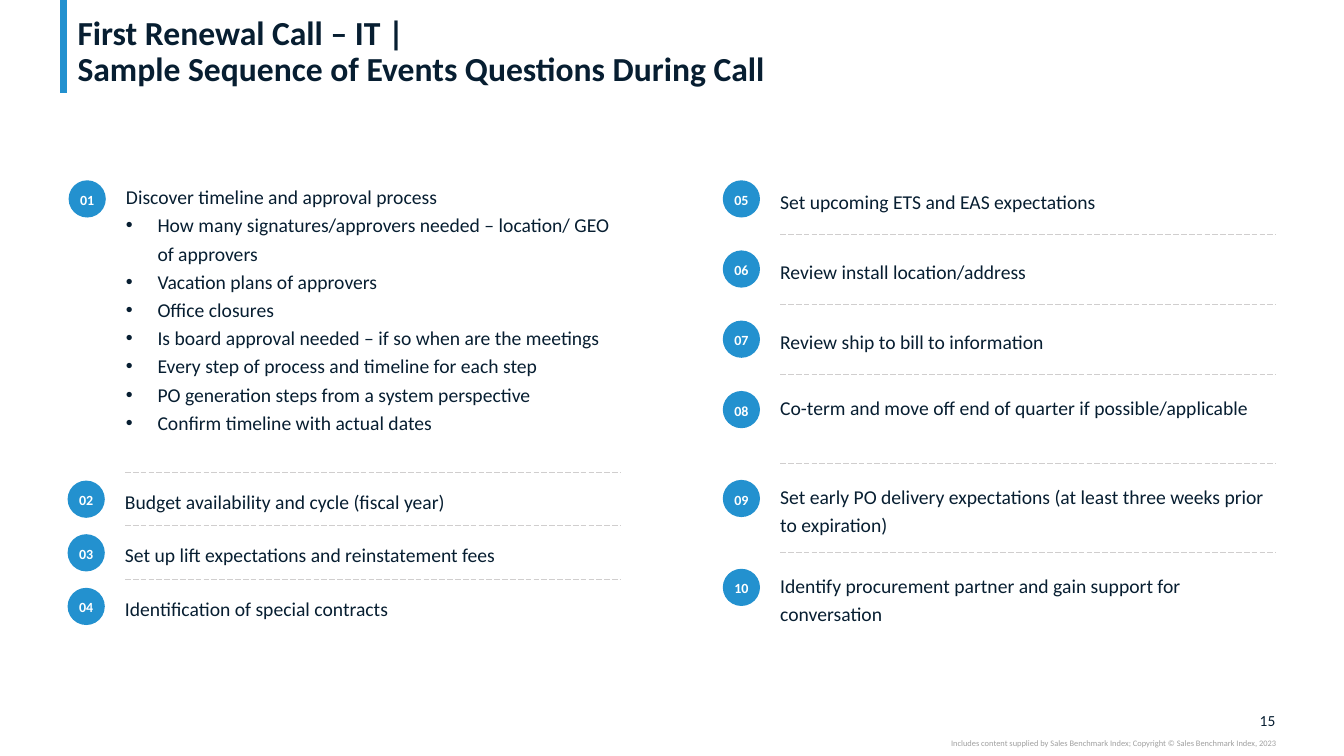
from lxml import etree
from pptx import Presentation
from pptx.dml.color import RGBColor
from pptx.enum import dml, shapes, text
from pptx.oxml import ns
from pptx.util import Pt

BLUE = RGBColor(0x23, 0x91, 0xCF)
NAVY = RGBColor(0x07, 0x1E, 0x31)
GREY = RGBColor(0xA0, 0xA0, 0xA0)
RULE = RGBColor(0xD0, 0xCE, 0xCE)
WHITE = RGBColor(0xFF, 0xFF, 0xFF)
FONT = "Calibri"
DOT = 26.6
SHIFT = 41
WIDTH = 354
TOP = 128.8

TITLE = ["First Renewal Call – IT | ", "Sample Sequence of Events Questions During Call"]
FIRST = "Discover timeline and approval process"
STEPS = [
    "How many signatures/approvers needed – location/ GEO of approvers",
    "Vacation plans of approvers",
    "Office closures",
    "Is board approval needed – if so when are the meetings",
    "Every step of process and timeline for each step",
    "PO generation steps from a system perspective",
    "Confirm timeline with actual dates",
]
LEFT = [
    "Budget availability and cycle (fiscal year)",
    "Set up lift expectations and reinstatement fees",
    "Identification of special contracts",
]
SHORT = [
    "Set upcoming ETS and EAS expectations",
    "Review install location/address",
    "Review ship to bill to information",
]
LONG = [
    "Co-term and move off end of quarter if possible/applicable",
    "Set early PO delivery expectations (at least three weeks prior to expiration)",
    "Identify procurement partner and gain support for conversation",
]
CREDIT = ("Includes content supplied by Sales Benchmark Index; "
          "Copyright © Sales Benchmark Index, 2023")


def add_run(para, words, size, color, bold=False):
    """Add one styled run to a paragraph."""
    run = para.add_run()
    run.text = words
    run.font.name = FONT
    run.font.size = Pt(size)
    run.font.bold = bold
    run.font.color.rgb = color


def set_frame(frame, anchor, side=0, top=0):
    """Set wrapping, anchor and insets of a text frame."""
    frame.word_wrap = True
    frame.auto_size = text.MSO_AUTO_SIZE.NONE
    frame.vertical_anchor = anchor
    frame.margin_left = frame.margin_right = Pt(side)
    frame.margin_top, frame.margin_bottom = Pt(top), 0


def set_para(para, align, space):
    """Set alignment and line spacing of a paragraph."""
    para.alignment = align
    para.line_spacing = space
    para.space_before = Pt(0)


def place(shape, x, y, w, h):
    """Move and size a shape."""
    shape.left, shape.top, shape.width, shape.height = Pt(x), Pt(y), Pt(w), Pt(h)


def add_text(slide, box, words, size=14, color=NAVY, align=text.PP_ALIGN.LEFT,
             space=1.2, anchor=text.MSO_ANCHOR.TOP):
    """Add a text box with one paragraph."""
    frame = slide.shapes.add_textbox(*map(Pt, box)).text_frame
    set_frame(frame, anchor)
    para = frame.paragraphs[0]
    set_para(para, align, space)
    add_run(para, words, size, color)


def add_line(slide, x, y, end, low, color, width, dash=None):
    """Add a straight line without shadow."""
    line = slide.shapes.add_connector(
        shapes.MSO_CONNECTOR.STRAIGHT, Pt(x), Pt(y), Pt(end), Pt(low))
    line.line.color.rgb = color
    line.line.width = Pt(width)
    if dash:
        line.line.dash_style = dash
    etree.SubElement(line._element.spPr, ns.qn("a:effectLst"))


def add_rule(slide, x, y):
    """Add a dashed rule between two items."""
    add_line(slide, x, y, x + WIDTH, y, RULE, 0.5, dml.MSO_LINE.LONG_DASH)


def add_dot(slide, x, y, num):
    """Add a round badge with a two-digit number."""
    dot = slide.shapes.add_shape(
        shapes.MSO_SHAPE.OVAL, Pt(x), Pt(y), Pt(DOT), Pt(DOT))
    dot.shadow.inherit = False
    dot.fill.solid()
    dot.fill.fore_color.rgb = BLUE
    dot.line.fill.background()
    set_frame(dot.text_frame, text.MSO_ANCHOR.MIDDLE, top=2.9)
    para = dot.text_frame.paragraphs[0]
    set_para(para, text.PP_ALIGN.CENTER, 0.9)
    add_run(para, f"{num:02d}", 10, WHITE, True)


def add_items(slide, x, y, step, drop, high, gap, start, items, ruled=True):
    """Add evenly spaced numbered items, each with a rule above it."""
    for i, words in enumerate(items):
        top = y + i * step
        add_text(slide, (x + SHIFT, top + drop, WIDTH, high), words)
        add_dot(slide, x, top, start + i)
        if ruled or i:
            add_rule(slide, x + SHIFT, top - gap)


def fill_title(shape):
    """Place the title and write its two lines."""
    place(shape, 48.2, 2.9, 863.3, 60.5)
    set_frame(shape.text_frame, text.MSO_ANCHOR.BOTTOM, side=7.2)
    para = shape.text_frame.paragraphs[0]
    set_para(para, text.PP_ALIGN.LEFT, 0.9)
    add_run(para, TITLE[0], 24, NAVY, True)
    para.add_line_break()
    add_run(para, TITLE[1], 24, NAVY, True)


def fill_list(shape):
    """Place the body and write the first item with its bullets."""
    place(shape, 90, TOP, WIDTH, 202.3)
    frame = shape.text_frame
    set_frame(frame, text.MSO_ANCHOR.TOP)
    for i, words in enumerate([FIRST] + STEPS):
        para = frame.add_paragraph() if i else frame.paragraphs[0]
        props = para._p.get_or_add_pPr()
        inset = Pt(22.5) if i else 0
        props.set("marL", str(inset))
        props.set("indent", str(-inset))
        if i:
            etree.SubElement(props, ns.qn("a:buFont")).set("typeface", "Arial")
            etree.SubElement(props, ns.qn("a:buChar")).set("char", "•")
        else:
            etree.SubElement(props, ns.qn("a:buNone"))
        set_para(para, text.PP_ALIGN.LEFT, 1.2)
        add_run(para, words, 14, NAVY)


def main():
    """Build and save the slide."""
    deck = Presentation()
    deck.slide_width, deck.slide_height = Pt(960), Pt(540)
    slide = deck.slides.add_slide(deck.slide_layouts[1])
    add_line(slide, 45.7, 0, 45.7, 66.5, BLUE, 5)
    right = text.PP_ALIGN.RIGHT
    add_text(slide, (887, 507.6, 24, 13.7), "15", 11, NAVY, right, 1,
             text.MSO_ANCHOR.MIDDLE)
    add_text(slide, (540, 527, 371.5, 7.3), CREDIT, 6, GREY, right, 1)
    fill_title(slide.shapes.title)
    fill_list(slide.placeholders[1])
    add_dot(slide, 49, TOP, 1)
    add_items(slide, 48.3, 343.3, 38.3, 3.2, 19.4, 6, 2, LEFT)
    add_items(slide, 516.3, TOP, 50.1, 3.6, 19.4, 11.7, 5, SHORT, False)
    add_items(slide, 516.3, 279.3, 63.5, 0, 39.6, 11.7, 8, LONG)
    deck.save("out.pptx")


if __name__ == "__main__":
    main()
